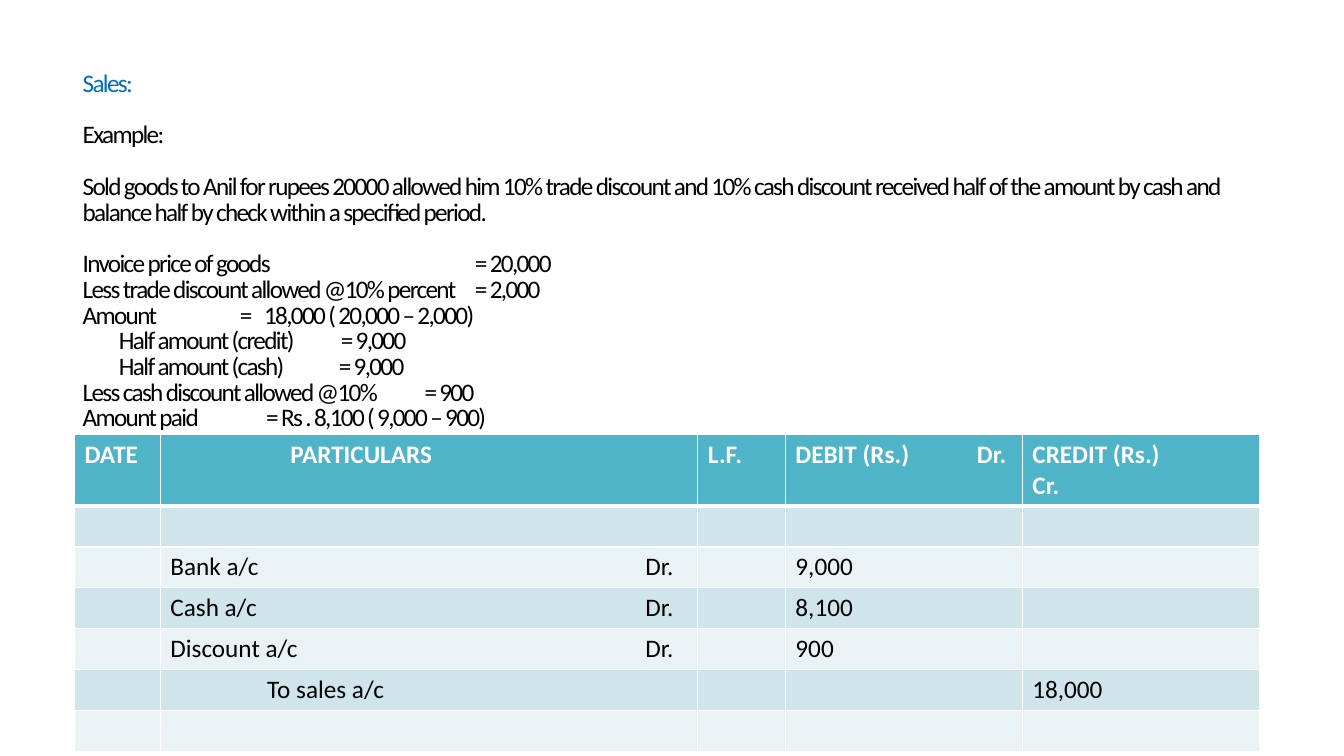
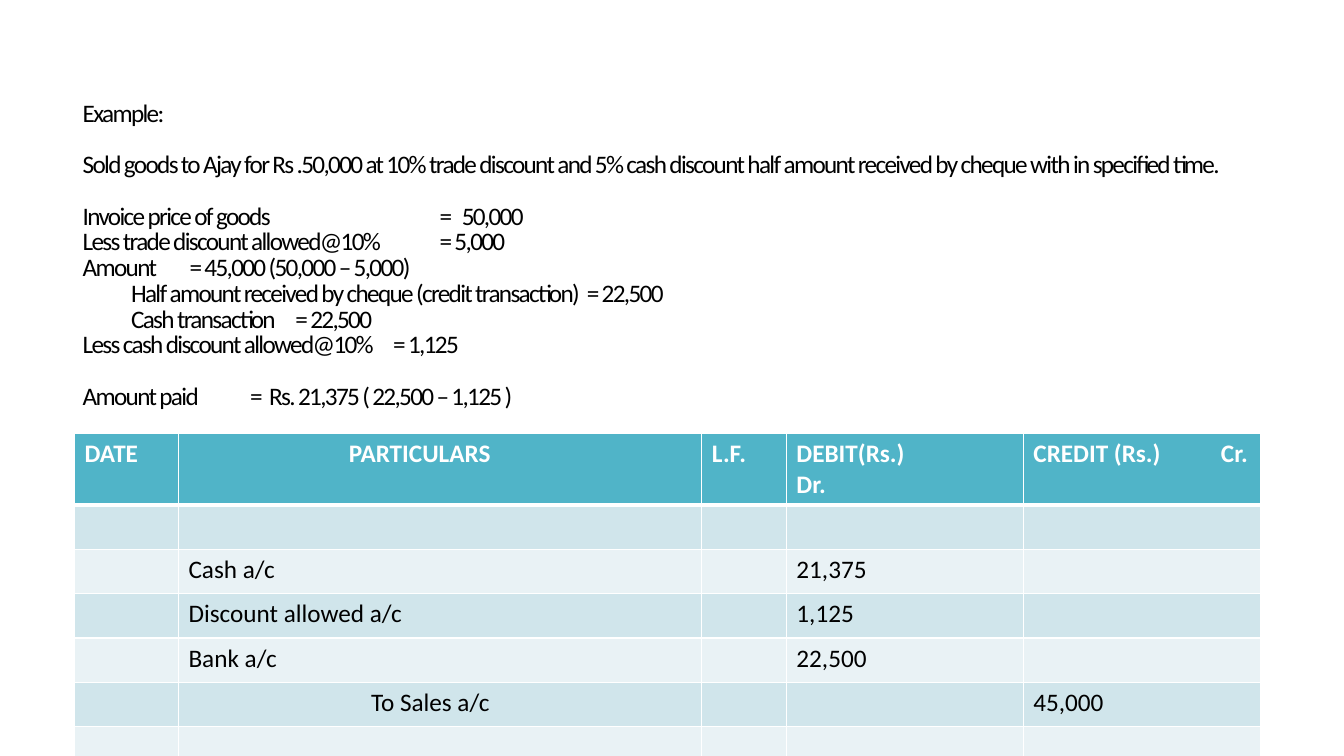
from dataclasses import dataclass

from lxml import etree
from pptx import Presentation
from pptx import util as u
from pptx.dml import color
from pptx.enum import text
from pptx.oxml import ns


@dataclass
class Line:
    text: str
    stops: tuple = ()
    indent: float = 0
    gap: bool = False
    color: str = "ink"


class LedgerDeck:
    COLORS = {"ink": "000000", "heading": "0070C0", "white": "FFFFFF",
              "header": "50B4C8", "odd": "D0E5EB", "even": "E9F2F5"}
    FONT = "Calibri"
    SIZE = u.Pt(18)
    BLANK_LINE = u.Pt(18.4)

    def __init__(self):
        self.deck = Presentation()
        self.deck.slide_width = u.Inches(13.33)
        self.deck.slide_height = u.Inches(7.5)
        self.slide = None

    def rgb(self, name):
        return color.RGBColor.from_string(self.COLORS[name])

    def add_slide(self):
        self.slide = self.deck.slides.add_slide(self.deck.slide_layouts[5])

    def set_line(self, paragraph, line, ink, bold=False, tracking=None):
        paragraph.text = line.text
        paragraph.alignment = text.PP_ALIGN.LEFT
        props = paragraph._p.get_or_add_pPr()
        if line.indent:
            props.set("marL", str(u.Inches(line.indent)))
            props.set("indent", "0")
        if line.stops:
            tabs = etree.SubElement(props, ns.qn("a:tabLst"))
            for stop in line.stops:
                etree.SubElement(tabs, ns.qn("a:tab"), pos=str(u.Inches(stop)), algn="l")
        for run in paragraph.runs:
            run.font.name = self.FONT
            run.font.size = self.SIZE
            run.font.bold = bold
            run.font.color.rgb = self.rgb(ink)
            if tracking:
                run._r.get_or_add_rPr().set("spc", str(tracking))

    def title(self, lines, height):
        working = self.slide.shapes.title
        working.left, working.top = u.Inches(0.72), u.Inches(0.55)
        working.width, working.height = u.Inches(11.78), u.Inches(height)
        frame = working.text_frame
        frame.word_wrap = True
        frame.auto_size = text.MSO_AUTO_SIZE.NONE
        frame.vertical_anchor = text.MSO_ANCHOR.MIDDLE
        for index, line in enumerate(lines):
            paragraph = frame.add_paragraph() if index else frame.paragraphs[0]
            paragraph.line_spacing = 0.85
            paragraph.space_before = self.BLANK_LINE if line.gap else u.Pt(0)
            self.set_line(paragraph, line, line.color, tracking=-120)

    def borders(self, cell, row):
        props = cell._tc.get_or_add_tcPr()
        for side in "LRTB":
            heavy = (row, side) in ((0, "B"), (1, "T"))
            edge = etree.SubElement(props, ns.qn(f"a:ln{side}"), w=str(u.Pt(3 if heavy else 1)))
            fill = etree.SubElement(edge, ns.qn("a:solidFill"))
            etree.SubElement(fill, ns.qn("a:srgbClr"), val=self.COLORS["white"])

    def journal(self, top, widths, row_height, header, entries):
        blank = ("", "", "")
        body = [("", particulars, "", debit, credit)
                for particulars, debit, credit in (blank, *entries, blank)]
        rows = [header, *body]
        table = self.slide.shapes.add_table(
            len(rows), len(widths), u.Inches(0.74), u.Inches(top),
            u.Inches(sum(widths)), u.Inches(row_height * len(rows))).table
        for column, width in zip(table.columns, widths):
            column.width = u.Inches(width)
        for r, row in enumerate(rows):
            table.rows[r].height = u.Inches(row_height)
            band = "header" if r == 0 else ("odd" if r % 2 else "even")
            for c, entry in enumerate(row):
                cell = table.cell(r, c)
                self.borders(cell, r)
                cell.fill.solid()
                cell.fill.fore_color.rgb = self.rgb(band)
                line = entry if isinstance(entry, Line) else Line(entry)
                self.set_line(cell.text_frame.paragraphs[0], line,
                              "ink" if r else "white", bold=r == 0)

    def save(self):
        self.deck.save("out.pptx")


def sale_to_anil(deck):
    deck.add_slide()
    deck.title([
        Line("Sales:", color="heading"),
        Line("Example:", gap=True),
        Line("Sold goods to Anil for rupees 20000 allowed him 10% trade discount and 10% cash "
             "discount received half of the amount by cash and balance half by check within "
             "a specified period.", gap=True),
        Line("Invoice price of goods\t= 20,000", (3.89,), gap=True),
        Line("Less trade discount allowed @10% percent\t= 2,000", (3.89,)),
        Line("Amount\t=\t18,000 ( 20,000 – 2,000)", (1.56, 1.8)),
        Line("\tHalf amount (credit)\t= 9,000", (0.36, 2.56)),
        Line("\tHalf amount (cash)\t= 9,000", (0.36, 2.54)),
        Line("Less cash discount allowed @10%\t= 900", (3.39,)),
        Line("Amount paid\t= Rs . 8,100 ( 9,000 – 900)", (1.82,)),
    ], 3.9)
    debit_mark = (4.71,)
    deck.journal(
        4.31, (0.85, 5.33, 0.87, 2.35, 2.35), 0.4,
        ("DATE", Line("PARTICULARS", indent=1.19), "L.F.",
         Line("DEBIT (Rs.)\tDr.", (1.8,)), "CREDIT (Rs.)\vCr."),
        [(Line("Bank a/c\tDr.", debit_mark), "9,000", ""),
         (Line("Cash a/c\tDr.", debit_mark), "8,100", ""),
         (Line("Discount a/c\tDr.", debit_mark), "900", ""),
         (Line("To sales a/c", indent=0.96), "", "18,000")])


def sale_to_ajay(deck):
    deck.add_slide()
    deck.title([
        Line("Example:"),
        Line("Sold goods to Ajay for Rs .50,000 at 10% trade discount and 5% cash discount "
             "half amount received by cheque with in specified time.", gap=True),
        Line("Invoice price of goods\t=\t50,000", (3.54, 3.76), gap=True),
        Line("Less trade discount allowed@10%\t= 5,000", (3.54,)),
        Line("Amount\t= 45,000 (50,000 – 5,000)", (1.06,)),
        Line("\tHalf amount received by cheque (credit transaction)\t= 22,500", (0.48, 5)),
        Line("\tCash transaction\t= 22,500", (0.48, 2.11)),
        Line("Less cash discount allowed@10%\t= 1,125", (3.08,)),
        Line("Amount paid\t=\tRs. 21,375 ( 22,500 – 1,125 )", (1.66, 1.85), gap=True),
    ], 3.98)
    deck.journal(
        4.3, (1.03, 5.19, 0.84, 2.35, 2.35), 0.44,
        ("DATE", Line("PARTICULARS", indent=1.59), "L.F.",
         "DEBIT(Rs.)\vDr.", Line("CREDIT (Rs.)\tCr.", (1.86,))),
        [("Cash a/c", "21,375", ""),
         ("Discount allowed a/c", "1,125", ""),
         ("Bank a/c", "22,500", ""),
         (Line("To Sales a/c", indent=1.81), "", "45,000")])


def main():
    deck = LedgerDeck()
    sale_to_anil(deck)
    sale_to_ajay(deck)
    deck.save()


if __name__ == "__main__":
    main()
